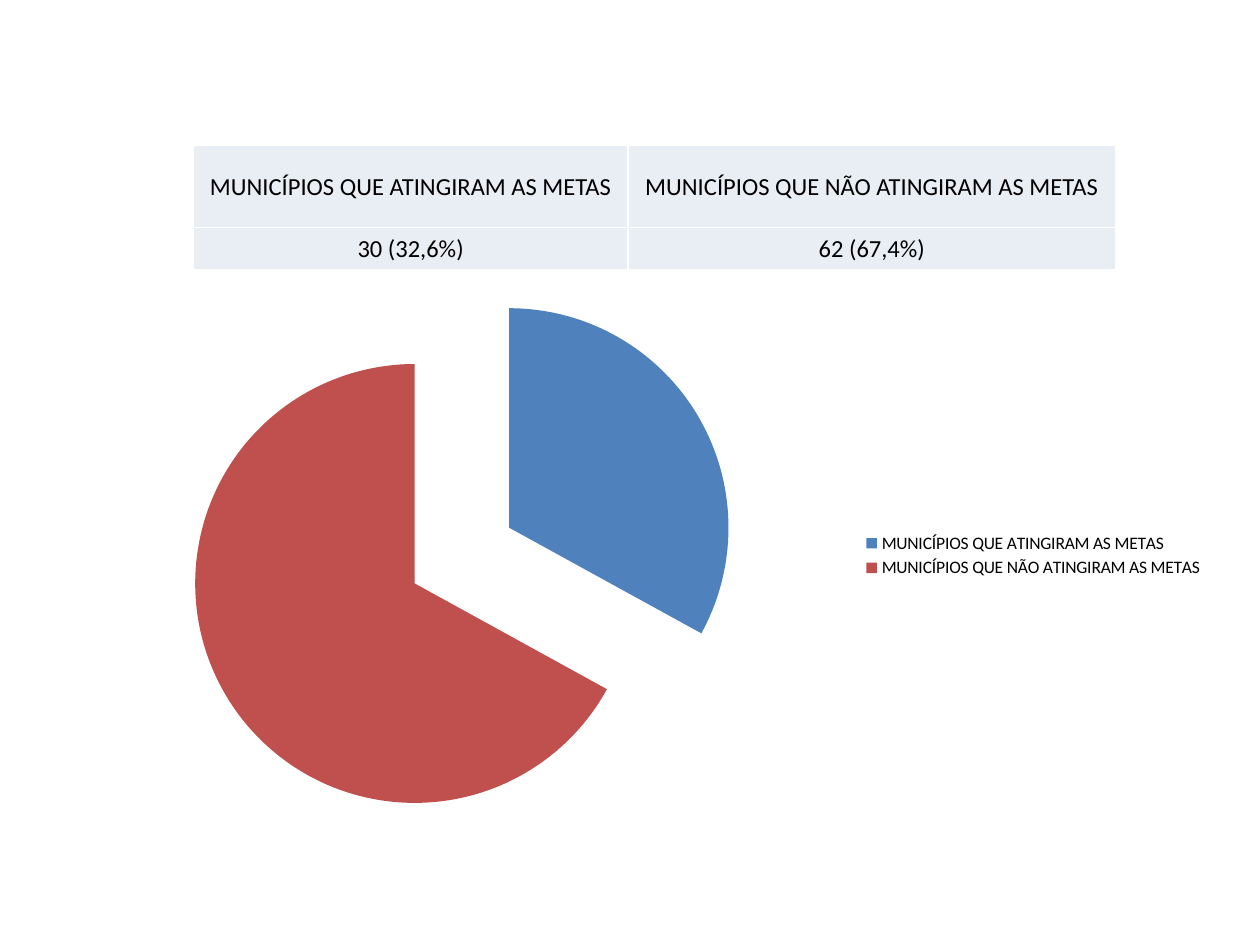
from dataclasses import dataclass

from lxml.etree import SubElement
from pptx import Presentation
from pptx.chart.data import CategoryChartData
from pptx.dml.color import RGBColor
from pptx.enum.chart import XL_CHART_TYPE, XL_LEGEND_POSITION
from pptx.enum.text import MSO_ANCHOR, PP_ALIGN
from pptx.oxml.ns import qn
from pptx.util import Inches, Pt


@dataclass(frozen=True)
class Theme:
    font: str = "Calibri"
    text: str = "000000"
    cell: str = "E9EDF4"
    border: str = "FFFFFF"
    slices: tuple = ("4F81BD", "C0504D")
    table_size: int = 14
    legend_size: int = 10


GROUPS = ("MUNICÍPIOS QUE ATINGIRAM AS METAS", "MUNICÍPIOS QUE NÃO ATINGIRAM AS METAS")
COUNTS = ("30 (32,6%)", "62 (67,4%)")
SHARES = (33, 67)


class SlideBuilder:
    """Places elements on a grid of 100 columns by 75 rows."""

    def __init__(self, deck, theme):
        self.theme = theme
        self.column = deck.slide_width / 100
        self.row = deck.slide_height / 75
        self.page = deck.slides.add_slide(deck.slide_layouts[6])

    def across(self, columns):
        return round(columns * self.column)

    def down(self, rows):
        return round(rows * self.row)

    def style_font(self, font, size):
        font.name = self.theme.font
        font.size = Pt(size)
        font.bold = False
        font.color.rgb = RGBColor.from_string(self.theme.text)

    def pie(self, left, top, width, height, categories, values, explosion):
        data = CategoryChartData()
        data.categories = categories
        data.add_series("Series 1", values)
        chart = self.page.shapes.add_chart(
            XL_CHART_TYPE.PIE, self.across(left), self.down(top),
            self.across(width), self.down(height), data).chart
        self.style_font(chart.font, self.theme.legend_size)
        chart.has_title = False
        chart.has_legend = True
        chart.legend.position = XL_LEGEND_POSITION.RIGHT
        chart.legend.include_in_layout = False
        plot = chart.plots[0]
        plot.vary_by_categories = True
        series = plot.series[0]
        for index, color in enumerate(self.theme.slices):
            fill = series.points[index].format.fill
            fill.solid()
            fill.fore_color.rgb = RGBColor.from_string(color)
        exploded = SubElement(series._element, qn("c:explosion"))
        exploded.set("val", str(explosion))
        series._element.find(qn("c:dPt")).addprevious(exploded)

    def table(self, left, top, widths, heights, rows):
        table = self.page.shapes.add_table(
            len(heights), len(widths), self.across(left), self.down(top),
            self.across(sum(widths)), self.down(sum(heights))).table
        table.first_row = table.horz_banding = False
        for column, width in zip(table.columns, widths):
            column.width = self.across(width)
        for row, height, texts in zip(table.rows, heights, rows):
            row.height = self.down(height)
            for cell, text in zip(row.cells, texts):
                self.fill_cell(cell, text)

    def fill_cell(self, cell, text):
        cell.text = text
        cell.vertical_anchor = MSO_ANCHOR.MIDDLE
        cell.margin_left = cell.margin_right = cell.margin_top = Inches(0.01)
        cell.margin_bottom = 0
        para = cell.text_frame.paragraphs[0]
        para.alignment = PP_ALIGN.CENTER
        self.style_font(para.font, self.theme.table_size)
        properties = cell._tc.get_or_add_tcPr()
        for side in ("a:lnL", "a:lnR", "a:lnT", "a:lnB"):
            line = SubElement(properties, qn(side), w=str(Pt(1)))
            paint = SubElement(line, qn("a:solidFill"))
            SubElement(paint, qn("a:srgbClr"), val=self.theme.border)
        cell.fill.solid()
        cell.fill.fore_color.rgb = RGBColor.from_string(self.theme.cell)


def main():
    deck = Presentation()
    deck.slide_width, deck.slide_height = Inches(10), Inches(7.5)
    builder = SlideBuilder(deck, Theme())
    builder.pie(5, 20.95, 91.5, 46.3, GROUPS, SHARES, explosion=25)
    builder.table(15.35, 11.5, (34.5, 38.7), (6.55, 3.35), (GROUPS, COUNTS))
    deck.save("out.pptx")


if __name__ == "__main__":
    main()
